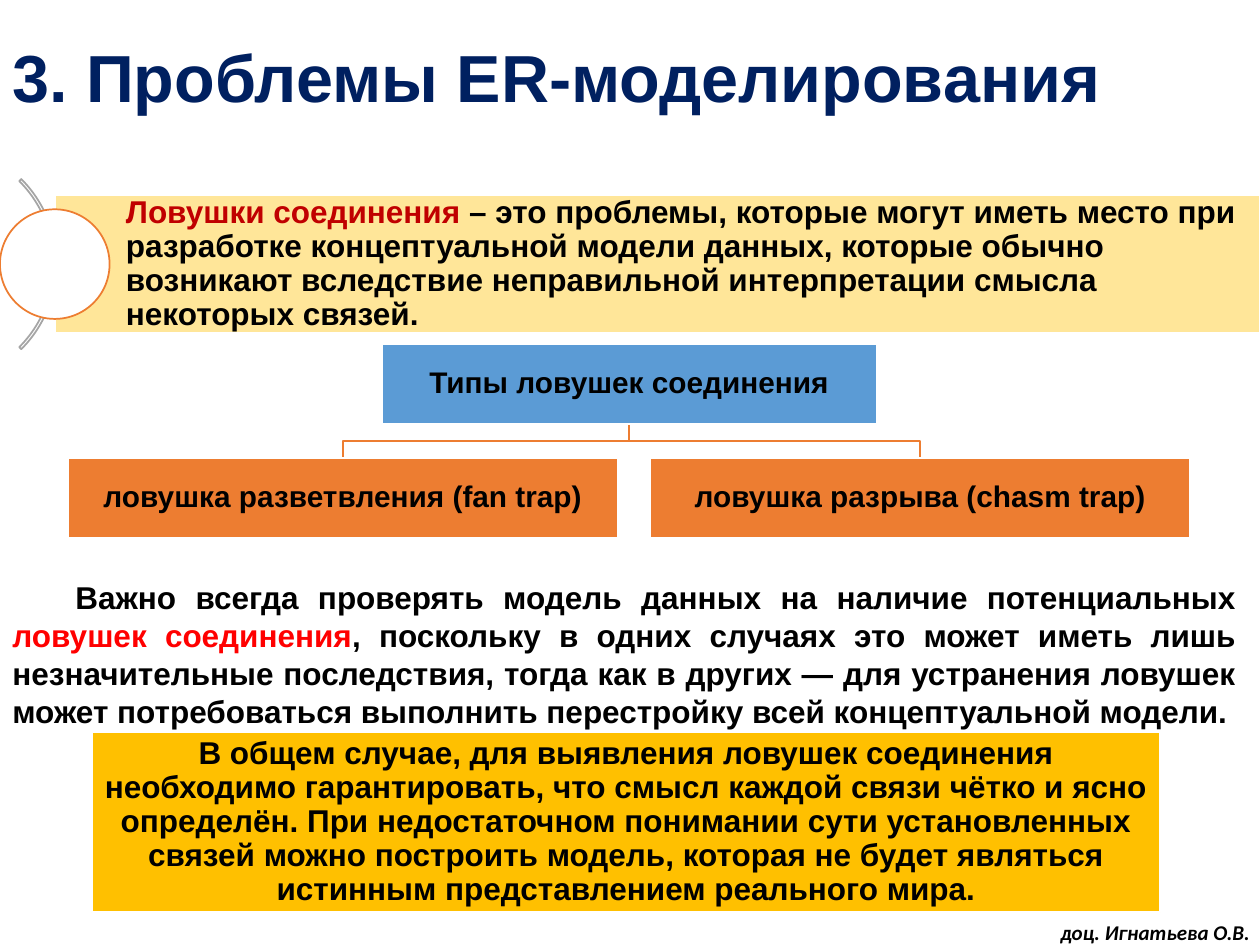
from dataclasses import dataclass

import pptx
import pptx.dml.color
import pptx.enum.shapes
import pptx.enum.text
import pptx.util

Cm = pptx.util.Cm
Pt = pptx.util.Pt
ALIGN = pptx.enum.text.PP_ALIGN
ANCHOR = pptx.enum.text.MSO_ANCHOR
PRESET = pptx.enum.shapes.MSO_SHAPE


@dataclass(frozen=True)
class Theme:
    font: str = "Arial"
    author_font: str = "Calibri"
    title_size: int = 38
    text_size: int = 18
    node_size: int = 17
    author_size: int = 12
    navy: str = "002060"
    black: str = "000000"
    white: str = "FFFFFF"
    red: str = "FF0000"
    dark_red: str = "C00000"
    blue: str = "5B9BD5"
    orange: str = "ED7D31"
    cream: str = "FFE699"
    amber: str = "FFC000"
    gray: str = "A5A5A5"


THEME = Theme()


@dataclass(frozen=True)
class Box:
    left: float
    top: float
    width: float
    height: float

    @property
    def center(self) -> float:
        return self.left + self.width / 2

    @property
    def bottom(self) -> float:
        return self.top + self.height

    def lengths(self) -> list:
        return [Cm(v) for v in (self.left, self.top, self.width, self.height)]


@dataclass(frozen=True)
class Node:
    box: Box
    label: str
    fill: str


@dataclass(frozen=True)
class Run:
    text: str
    color: str = THEME.black


def rgb(code: str) -> pptx.dml.color.RGBColor:
    return pptx.dml.color.RGBColor.from_string(code)


def write(shape, runs: list[Run], *, size: int = THEME.text_size, font: str = THEME.font,
          align=ALIGN.LEFT, anchor=ANCHOR.MIDDLE, spacing: float = 0.9, indent: float = 0,
          insets: tuple = (0.25, 0.13, 0.25, 0.13), italic: bool = False,
          wrap: bool = True) -> None:
    frame = shape.text_frame
    frame.word_wrap = wrap
    frame.vertical_anchor = anchor
    frame.margin_left, frame.margin_top, frame.margin_right, frame.margin_bottom = map(Cm, insets)
    paragraph = frame.paragraphs[0]
    paragraph.alignment = align
    paragraph.line_spacing = spacing
    if indent:
        paragraph._p.get_or_add_pPr().set("indent", str(Cm(indent)))
    for part in runs:
        run = paragraph.add_run()
        run.text = part.text
        run.font.name = font
        run.font.size = Pt(size)
        run.font.bold = True
        run.font.italic = italic
        run.font.color.rgb = rgb(part.color)


def outline(shape, line: str, fill: str | None = None):
    shape.shadow.inherit = False
    if fill:
        shape.fill.solid()
        shape.fill.fore_color.rgb = rgb(fill)
    else:
        shape.fill.background()
    shape.line.color.rgb = rgb(line)
    shape.line.width = Pt(1)
    return shape


def draw(slide, preset, box: Box, line: str = THEME.white, fill: str | None = None):
    return outline(slide.shapes.add_shape(preset, *box.lengths()), line, fill)


def draw_text(slide, box: Box, runs: list[Run], **style) -> None:
    write(slide.shapes.add_textbox(*box.lengths()), runs, **style)


def draw_node(slide, node: Node) -> None:
    shape = draw(slide, PRESET.RECTANGLE, node.box, fill=node.fill)
    write(shape, [Run(node.label)], size=THEME.node_size, align=ALIGN.CENTER, insets=(0.03,) * 4)


def draw_branch(slide, parent: Box, child: Box) -> None:
    middle = (parent.bottom + child.top) / 2
    builder = slide.shapes.build_freeform(Cm(parent.center), Cm(parent.bottom), scale=1.0)
    corners = [(parent.center, middle), (child.center, middle), (child.center, child.top)]
    builder.add_line_segments([(Cm(x), Cm(y)) for x, y in corners], close=False)
    outline(builder.convert_to_shape(), THEME.orange)


def main() -> None:
    deck = pptx.Presentation()
    deck.slide_width, deck.slide_height = Cm(25.4), Cm(19.05)
    slide = deck.slides.add_slide(deck.slide_layouts[6])

    draw_text(slide, Box(0, 0.28, 25.4, 2.72), [Run("3. Проблемы ER-моделирования", THEME.navy)],
              size=THEME.title_size)
    draw_text(slide, Box(0, 11.53, 25.17, 3.23), [
        Run("Важно всегда проверять модель данных на наличие потенциальных "),
        Run("ловушек соединения", THEME.red),
        Run(", поскольку в одних случаях это может иметь лишь незначительные последствия, "
            "тогда как в других — для устранения ловушек может потребоваться выполнить "
            "перестройку всей концептуальной модели."),
    ], align=ALIGN.JUSTIFY, anchor=ANCHOR.TOP, spacing=1.0, indent=1.27)
    draw_text(slide, Box(21.13, 18.41, 4.39, 0.76), [Run("доц. Игнатьева О.В.")],
              size=THEME.author_size, font=THEME.author_font, anchor=ANCHOR.TOP, spacing=1.0,
              italic=True, wrap=False)

    types = Node(Box(7.7, 6.94, 9.97, 1.61), "Типы ловушек соединения", THEME.blue)
    traps = [
        Node(Box(1.37, 9.23, 11.08, 1.61), "ловушка разветвления (fan trap)", THEME.orange),
        Node(Box(13.11, 9.23, 10.88, 1.61), "ловушка разрыва (chasm trap)", THEME.orange),
    ]
    for trap in traps:
        draw_branch(slide, types.box, trap.box)
    for node in [types, *traps]:
        draw_node(slide, node)

    arc = draw(slide, PRESET.BLOCK_ARC, Box(-3.71, 2.9, 4.85, 4.85), line=THEME.gray)
    for index, value in enumerate((189, 27, 0.012)):
        arc.adjustments[index] = value
    definition = draw(slide, PRESET.RECTANGLE, Box(1.12, 3.94, 24.28, 2.77), fill=THEME.cream)
    write(definition, [
        Run("Ловушки соединения ", THEME.dark_red),
        Run("– это проблемы, которые могут иметь место при разработке концептуальной модели "
            "данных, которые обычно возникают вследствие неправильной интерпретации смысла "
            "некоторых связей."),
    ], insets=(1.42, 0.13, 0.13, 0.13))
    draw(slide, PRESET.OVAL, Box(0, 4.22, 2.21, 2.21), line=THEME.orange, fill=THEME.white)

    advice = draw(slide, PRESET.RECTANGLE, Box(1.85, 14.76, 21.54, 3.63), fill=THEME.amber)
    write(advice, [
        Run("В общем случае, для выявления ловушек соединения необходимо гарантировать, что "
            "смысл каждой связи чётко и ясно определён. При недостаточном понимании сути "
            "установленных связей можно построить модель, которая не будет являться истинным "
            "представлением реального мира."),
    ], align=ALIGN.CENTER, insets=(0.18,) * 4)

    deck.save("out.pptx")


if __name__ == "__main__":
    main()
